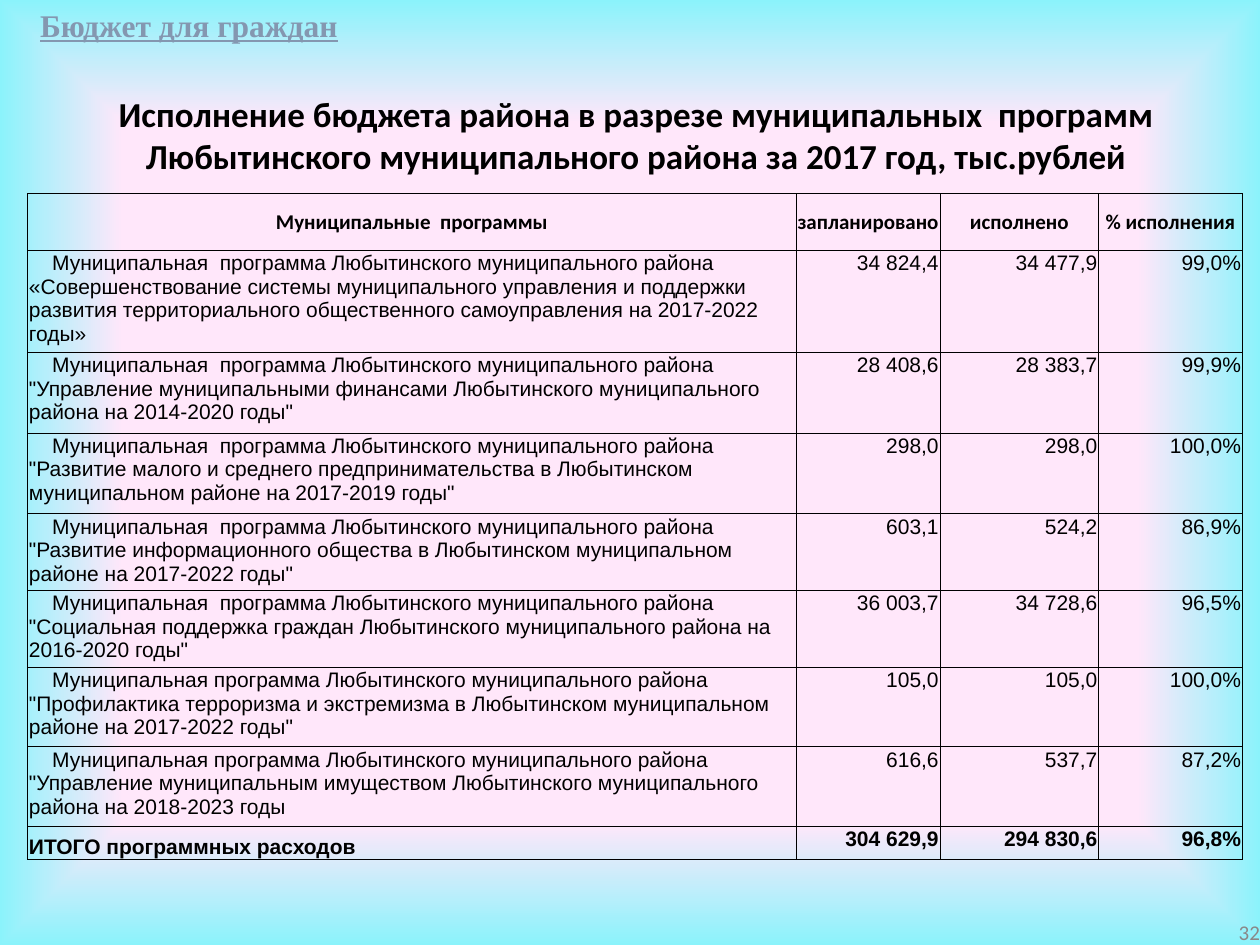
from lxml import etree
from pptx import Presentation
from pptx import util as u
from pptx.dml import color
from pptx.enum import text
from pptx.oxml import ns

BLACK = "000000"
RIGHT, CENTER, LEFT = text.PP_ALIGN.RIGHT, text.PP_ALIGN.CENTER, text.PP_ALIGN.LEFT

presentation = Presentation()
presentation.slide_width, presentation.slide_height = u.Inches(10), u.Inches(7.5)
WIDTH, HEIGHT = presentation.slide_width, presentation.slide_height
slide = presentation.slides.add_slide(presentation.slide_layouts[6])


def add_run(paragraph, words, size, font, hex_color, bold=False, shadow=False):
    run = paragraph.add_run()
    run.text = words
    run.font.size, run.font.name, run.font.bold = u.Pt(size), font, bold
    run.font.color.rgb = color.RGBColor.from_string(hex_color)
    if shadow:
        effects = etree.fromstring(
            f'<a:effectLst {ns.nsdecls("a")}><a:outerShdw blurRad="38100" dist="38100" '
            'dir="2700000" algn="tl"><a:srgbClr val="000000"><a:alpha val="43000"/>'
            '</a:srgbClr></a:outerShdw></a:effectLst>')
        run.font._element.find(ns.qn("a:solidFill")).addnext(effects)
    return run


def add_box(left, top, width, height, align, wrap=True):
    """Add a text box placed by shares of the slide; return its frame."""
    shape = slide.shapes.add_textbox(int(WIDTH * left), int(HEIGHT * top),
                                     int(WIDTH * width), int(HEIGHT * height))
    shape.text_frame.word_wrap = wrap
    shape.text_frame.paragraphs[0].alignment = align
    return shape.text_frame


# Background: pink centre fading to cyan edges
background = slide.background.fill
background.gradient()
gradient = slide.background._cSld.find(".//" + ns.qn("a:gradFill"))
for child in list(gradient):
    gradient.remove(child)
stops = etree.SubElement(gradient, ns.qn("a:gsLst"))
for position, hex_color in ((0, "FFE7FA"), (74, "FFE7FA"), (100, "8BF3FB")):
    stop = etree.SubElement(stops, ns.qn("a:gs"), pos=str(position * 1000))
    etree.SubElement(stop, ns.qn("a:srgbClr"), val=hex_color)
path_fill = etree.SubElement(gradient, ns.qn("a:path"), path="shape")
etree.SubElement(path_fill, ns.qn("a:fillToRect"), l="50000", t="50000", r="50000", b="50000")

# Slide number
frame = add_box(0.767, 0.972, 0.233, 0.028, RIGHT)
frame.margin_left = frame.margin_right = frame.margin_top = frame.margin_bottom = 0
frame.vertical_anchor = text.MSO_ANCHOR.MIDDLE
add_run(frame.paragraphs[0], "32", 12, "Calibri", "898989")

# Table of programmes
PROGRAM = "Муниципальная  программа Любытинского муниципального района "
PROGRAM_TIGHT = PROGRAM.replace("  ", " ")
rows = [
    ("Муниципальные  программы", "запланировано", "исполнено", "% исполнения"),
    (PROGRAM + "«Совершенствование системы муниципального управления и поддержки развития "
     "территориального общественного самоуправления на 2017-2022 годы»",
     "34 824,4", "34 477,9", "99,0%"),
    (PROGRAM + '"Управление муниципальными финансами Любытинского муниципального района '
     'на 2014-2020 годы"', "28 408,6", "28 383,7", "99,9%"),
    (PROGRAM + '"Развитие малого и среднего предпринимательства в Любытинском '
     'муниципальном районе на 2017-2019 годы"', "298,0", "298,0", "100,0%"),
    (PROGRAM + '"Развитие информационного общества в Любытинском муниципальном районе '
     'на 2017-2022 годы"', "603,1", "524,2", "86,9%"),
    (PROGRAM + '"Социальная поддержка граждан Любытинского муниципального района '
     'на 2016-2020 годы"', "36 003,7", "34 728,6", "96,5%"),
    (PROGRAM_TIGHT + '"Профилактика терроризма и экстремизма в Любытинском муниципальном '
     'районе на 2017-2022 годы"', "105,0", "105,0", "100,0%"),
    (PROGRAM_TIGHT + '"Управление муниципальным имуществом Любытинского муниципального '
     'района на 2018-2023 годы', "616,6", "537,7", "87,2%"),
    ("ИТОГО программных расходов", "304 629,9", "294 830,6", "96,8%"),
]
column_widths = [6.1, 1.14, 1.26, 1.14]
row_heights = [0.45, 0.64, 0.64, 0.64, 0.56, 0.6, 0.63, 0.63, 0.26]
table = slide.shapes.add_table(
    len(rows), len(column_widths), int(WIDTH * 0.022), int(HEIGHT * 0.205),
    u.Inches(sum(column_widths)), u.Inches(sum(row_heights))).table
table.first_row = table.horz_banding = False
for column, width in zip(table.columns, column_widths):
    column.width = u.Inches(width)

last = len(rows) - 1
for r, (values, height) in enumerate(zip(rows, row_heights)):
    table.rows[r].height = u.Inches(height)
    for c, value in enumerate(values):
        cell = table.cell(r, c)
        margin = 0 if r == 0 else u.Inches(0.01)
        cell.margin_left = cell.margin_right = cell.margin_top = margin
        cell.margin_bottom = 0
        paragraph = cell.text_frame.paragraphs[0]
        if r == 0:
            cell.vertical_anchor = text.MSO_ANCHOR.MIDDLE
            paragraph.alignment = CENTER
        elif c > 0:
            paragraph.alignment = RIGHT
        elif r == last:
            cell.vertical_anchor = text.MSO_ANCHOR.BOTTOM
        else:
            paragraph._p.get_or_add_pPr().set("indent", str(u.Pt(13.3)))
        add_run(paragraph, value, 12, "Calibri" if r == 0 else "Arial", BLACK,
                bold=r in (0, last))

        # Thin black borders, no fill
        cell.fill.background()
        properties = cell._tc.get_or_add_tcPr()
        for index, side in enumerate(("lnL", "lnR", "lnT", "lnB")):
            properties.insert(index, etree.fromstring(
                f'<a:{side} {ns.nsdecls("a")} w="{u.Pt(0.5)}"><a:solidFill>'
                f'<a:srgbClr val="{BLACK}"/></a:solidFill></a:{side}>'))

# Title
frame = add_box(0.005, 0.091, 1, 0.095, CENTER)
add_run(frame.paragraphs[0], "Исполнение бюджета района в разрезе муниципальных  программ "
        "Любытинского муниципального района за 2017 год, тыс.рублей",
        20, "Calibri", BLACK, bold=True, shadow=True)

# Running header
frame = add_box(0.022, 0, 0.259, 0.053, LEFT, wrap=False)
frame.auto_size = text.MSO_AUTO_SIZE.SHAPE_TO_FIT_TEXT
run = add_run(frame.paragraphs[0], "Бюджет для граждан", 18, "Times New Roman", "8497B0",
              bold=True, shadow=True)
run.font.underline = True

presentation.save("out.pptx")
